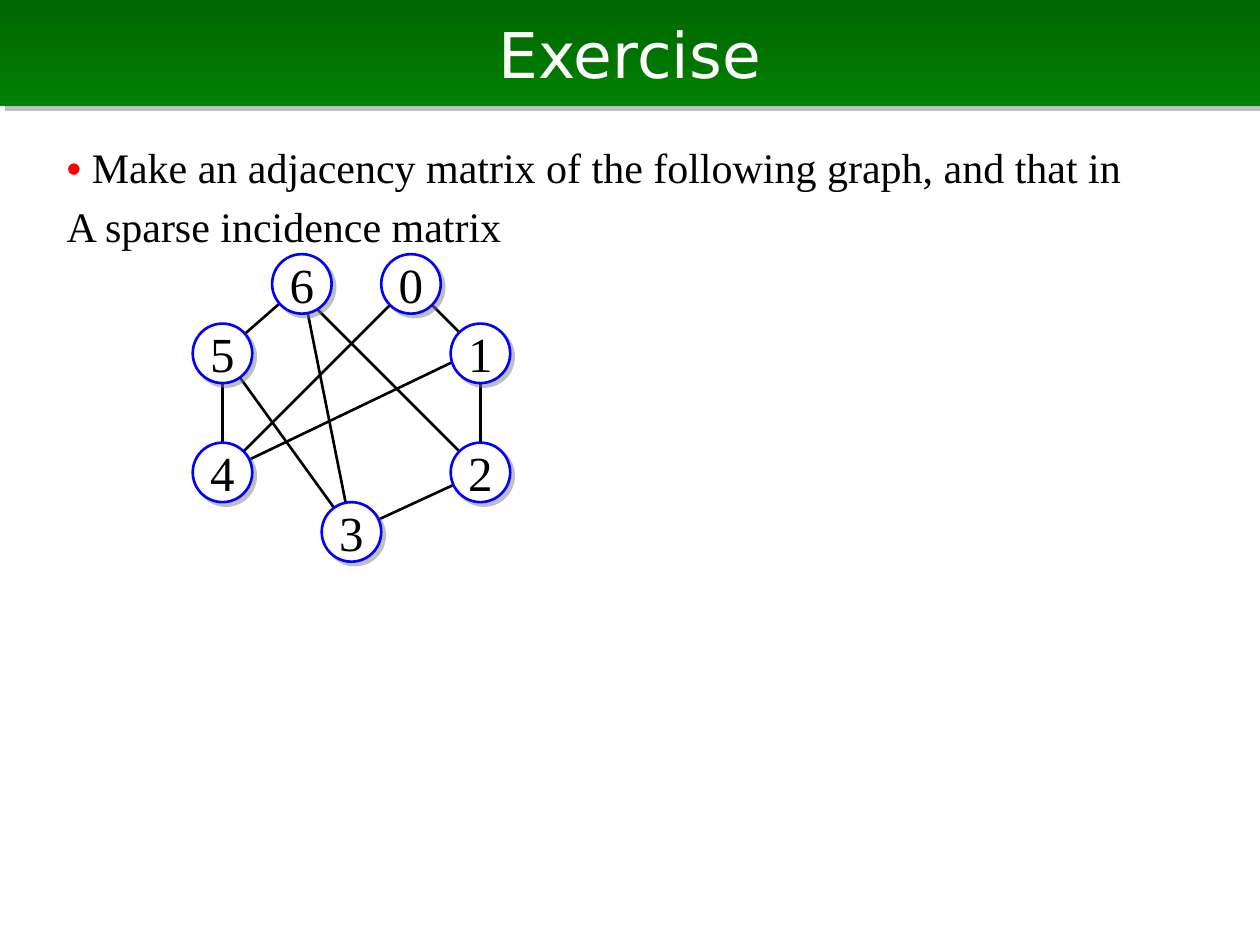
from lxml.etree import SubElement
from pptx import Presentation
from pptx.dml.color import RGBColor as RGB
from pptx.enum.shapes import MSO_CONNECTOR as Conn, MSO_SHAPE as Shape
from pptx.enum.text import MSO_ANCHOR as Anchor, PP_ALIGN as Align
from pptx.oxml.ns import qn
from pptx.util import Inches, Pt

W, H = Inches(10), Inches(7.5)
COLORS = {
    "dark_green": "006600", "green": "008000", "white": "FFFFFF",
    "black": "000000", "red": "FF0000", "blue": "0000FF", "gray": "808080",
}
TITLE_FONT, BODY_FONT = "DejaVu Sans", "Times New Roman"

# Graph grid: 127 cells across the slide, a node is 6 cells wide
CELL = W / 127
NODE = 6
GRAPH_LEFT, GRAPH_TOP = 0.153 * W, 0.269 * H
NODES = {  # label: column and row of the node's top left corner
    0: (19, 0), 1: (26, 7), 2: (26, 19), 3: (13, 25),
    4: (0, 19), 5: (0, 7), 6: (8, 0),
}
EDGES = [  # from, to, cells by which the start moves left
    (6, 5, 0), (0, 1, 0), (6, 3, 0), (1, 2, 0), (0, 4, 0),
    (3, 5, 0), (2, 3, 0), (1, 4, 1), (6, 2, 1), (4, 5, 0),
]


def color(name):
    return RGB.from_string(COLORS[name])


def grid(col, row):
    return int(GRAPH_LEFT + col * CELL), int(GRAPH_TOP + row * CELL)


def add_run(p, text, size, font, fill, bold=False):
    r = p.add_run()
    r.text = text
    r.font.size, r.font.name, r.font.bold = Pt(size), font, bold
    r.font.color.rgb = color(fill)


def add_shadow(sp, distance):
    sp.shadow.inherit = False
    effects = sp._element.spPr.find(qn("a:effectLst"))
    shadow = SubElement(effects, qn("a:outerShdw"), dist=str(Pt(distance)),
                        dir=str(45 * 60000), algn="ctr", rotWithShape="0")
    clr = SubElement(shadow, qn("a:srgbClr"), val=COLORS["gray"])
    SubElement(clr, qn("a:alpha"), val="50000")


def add_label(sp, text, size, font, fill):
    tf = sp.text_frame
    tf.vertical_anchor = Anchor.MIDDLE
    p = tf.paragraphs[0]
    p.alignment = Align.CENTER
    add_run(p, text, size, font, fill)
    return tf


def add_title(slide, text):
    sp = slide.shapes.add_shape(Shape.RECTANGLE, 0, 0, W, int(0.112 * H))
    sp.fill.gradient()
    sp.fill.gradient_angle = 270
    for stop, name in zip(sp.fill.gradient_stops, ("dark_green", "green")):
        stop.color.rgb = color(name)
    sp.line.fill.background()
    add_shadow(sp, 4.2)
    add_label(sp, text, 36, TITLE_FONT, "white")


def add_body(slide, paragraphs):
    box = slide.shapes.add_textbox(int(0.043 * W), int(0.143 * H),
                                   int(0.921 * W), int(0.136 * H))
    tf = box.text_frame
    tf.word_wrap = True
    for i, runs in enumerate(paragraphs):
        p = tf.add_paragraph() if i else tf.paragraphs[0]
        p.space_before = Pt(5)
        pPr = p._p.get_or_add_pPr()
        pPr.set("marL", str(Inches(0.38)))
        pPr.set("indent", str(Inches(-0.38)))
        for text, fill, bold in runs:
            add_run(p, text, 24, BODY_FONT, fill, bold)


def add_edge(slide, start, end, shift):
    (c1, r1), (c2, r2) = NODES[start], NODES[end]
    half = NODE / 2
    line = slide.shapes.add_connector(
        Conn.STRAIGHT, *grid(c1 + half - shift, r1 + half),
        *grid(c2 + half, r2 + half))
    line.line.color.rgb = color("black")
    line.line.width = Pt(1.5)
    SubElement(line._element.spPr, qn("a:effectLst"))


def add_node(slide, label, cell):
    size = int(NODE * CELL)
    sp = slide.shapes.add_shape(Shape.OVAL, *grid(*cell), size, size)
    sp.fill.solid()
    sp.fill.fore_color.rgb = color("white")
    sp.line.color.rgb = color("blue")
    sp.line.width = Pt(1.5)
    add_shadow(sp, 2.8)
    tf = add_label(sp, str(label), 28, BODY_FONT, "black")
    tf.word_wrap = False


def main():
    prs = Presentation()
    prs.slide_width, prs.slide_height = W, H
    slide = prs.slides.add_slide(prs.slide_layouts[6])

    # Heading and task
    add_title(slide, "Exercise")
    add_body(slide, [
        [("• ", "red", True),
         ("Make an adjacency matrix of the following graph, and that in",
          "black", False)],
        [("A sparse incidence matrix", "black", False)],
    ])

    # Graph: edges first, nodes on top
    for edge in EDGES:
        add_edge(slide, *edge)
    for label, cell in NODES.items():
        add_node(slide, label, cell)

    prs.save("out.pptx")


if __name__ == "__main__":
    main()
